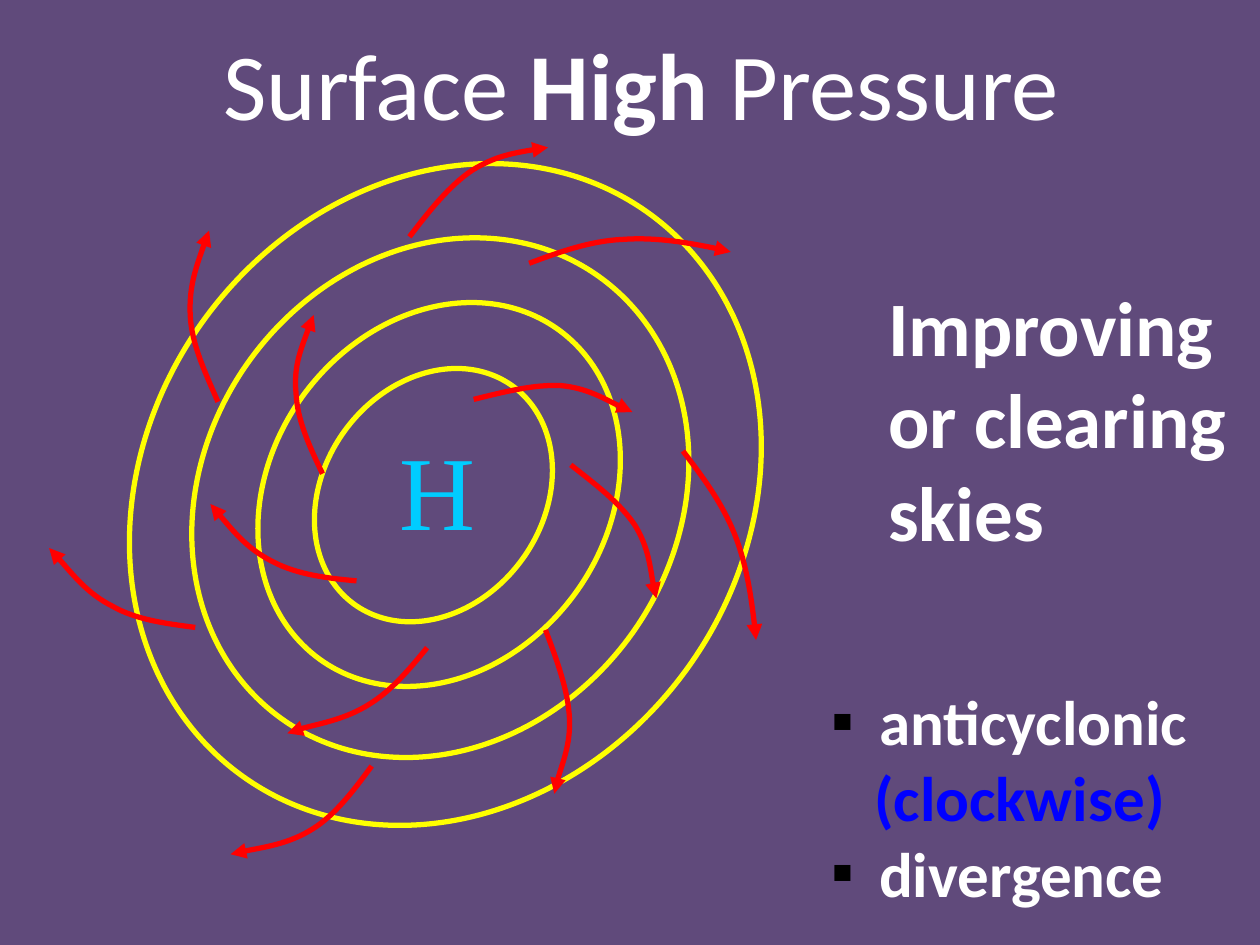
from lxml import etree
from pptx import Presentation
from pptx.dml.color import RGBColor
from pptx.enum.shapes import MSO_SHAPE
from pptx.enum.text import MSO_ANCHOR, PP_ALIGN
from pptx.oxml.ns import qn
from pptx.util import Inches, Pt

RECTANGLE = MSO_SHAPE.RECTANGLE
OVAL = MSO_SHAPE.OVAL
TOP = MSO_ANCHOR.TOP
LEFT = PP_ALIGN.LEFT
TITLE_ONLY = 5

COLORS = {
    "background": "604A7B",
    "isobar": "FFFF00",
    "wind": "FF0000",
    "center": "00CCFF",
    "text": "FFFFFF",
    "rotation": "0000FF",
    "bullet": "000000",
}

ISOBAR_ROTATION = 36.1
# left, top, width, height, from the outside in
ISOBARS = [
    (1.17, 1.17, 4.73, 5.51),
    (1.63, 1.79, 3.73, 4.32),
    (2.15, 2.31, 2.67, 3.23),
    (2.57, 2.86, 1.74, 2.14),
]

# Start point, then three points for each of two Bezier segments
WIND_ARROWS = [
    [(1.73, 3.19), (1.63, 2.96), (1.52, 2.73), (1.51, 2.5), (1.5, 2.27), (1.58, 2.05), (1.66, 1.83)],
    [(2.56, 3.76), (2.46, 3.55), (2.36, 3.34), (2.35, 3.12), (2.33, 2.91), (2.41, 2.71), (2.49, 2.5)],
    [(3.25, 1.88), (3.41, 1.67), (3.57, 1.47), (3.75, 1.35), (3.93, 1.24), (4.14, 1.2), (4.35, 1.17)],
    [(4.2, 2.09), (4.44, 2), (4.69, 1.91), (4.95, 1.9), (5.22, 1.88), (5.66, 1.96), (5.8, 2)],
    [(4.33, 5), (4.42, 5.24), (4.51, 5.48), (4.52, 5.7), (4.53, 5.91), (4.41, 6.2), (4.4, 6.3)],
    [(3.39, 5.14), (3.25, 5.31), (3.11, 5.48), (2.93, 5.59), (2.74, 5.71), (2.36, 5.78), (2.28, 5.82)],
    [(2.83, 4.61), (2.6, 4.59), (2.36, 4.56), (2.17, 4.46), (1.97, 4.36), (1.82, 4.18), (1.67, 4)],
    [(1.55, 4.98), (1.32, 4.95), (1.08, 4.92), (0.89, 4.81), (0.69, 4.71), (0.47, 4.43), (0.39, 4.35)],
    [(2.95, 6.08), (2.81, 6.27), (2.66, 6.47), (2.48, 6.58), (2.29, 6.7), (1.95, 6.75), (1.83, 6.78)],
    [(3.76, 3.17), (4, 3.11), (4.24, 3.05), (4.45, 3.06), (4.66, 3.08), (4.92, 3.23), (5.02, 3.27)],
    [(4.53, 3.69), (4.72, 3.84), (4.92, 3.99), (5.04, 4.17), (5.15, 4.35), (5.18, 4.65), (5.21, 4.75)],
    [(5.42, 3.58), (5.58, 3.79), (5.73, 3.99), (5.83, 4.24), (5.93, 4.49), (5.99, 4.93), (6, 5.08)],
]


def color(name):
    return RGBColor.from_string(COLORS[name])


def style_outline(shape, line_color, width=3):
    shape.shadow.inherit = False
    shape.fill.background()
    shape.line.color.rgb = color(line_color)
    shape.line.width = Pt(width)


def add_background(slide, presentation):
    shape = slide.shapes.add_shape(
        RECTANGLE, 0, 0, presentation.slide_width, presentation.slide_height)
    style_outline(shape, "background", 0.75)
    shape.fill.solid()
    shape.fill.fore_color.rgb = color("background")


def add_isobar(slide, box):
    shape = slide.shapes.add_shape(OVAL, *map(Inches, box))
    shape.rotation = ISOBAR_ROTATION
    style_outline(shape, "isobar")


def add_wind_arrow(slide, points):
    start, *rest = [(Inches(x), Inches(y)) for x, y in points]
    builder = slide.shapes.build_freeform(*start)
    builder.add_line_segments(rest, close=False)
    shape = builder.convert_to_shape()
    style_outline(shape, "wind")

    # Turn each group of three line points into one Bezier segment
    outline = shape.element.find(".//" + qn("a:path"))
    lines = outline.findall(qn("a:lnTo"))
    for first in range(0, len(lines), 3):
        curve = etree.SubElement(outline, qn("a:cubicBezTo"))
        for line in lines[first:first + 3]:
            curve.append(line[0])
            outline.remove(line)

    tail = etree.SubElement(shape.line._get_or_add_ln(), qn("a:tailEnd"))
    tail.set("type", "triangle")


def add_run(paragraph, text, size, font="Calibri", fill="text", bold=False):
    run = paragraph.add_run()
    run.text = text
    run.font.size = Pt(size)
    run.font.name = font
    run.font.bold = bold
    run.font.color.rgb = color(fill)


def add_text(slide, box, lines, **text_format):
    frame = slide.shapes.add_textbox(*map(Inches, box)).text_frame
    frame.word_wrap = True
    paragraphs = [frame.paragraphs[0]] + [frame.add_paragraph() for _ in lines[1:]]
    for paragraph, line in zip(paragraphs, lines):
        add_run(paragraph, line, **text_format)
    return paragraphs


def add_bullet(paragraph, indent):
    properties = paragraph._p.get_or_add_pPr()
    properties.set("marL", str(Inches(indent)))
    properties.set("indent", str(-Inches(indent)))
    bullet_color = etree.SubElement(properties, qn("a:buClr"))
    etree.SubElement(bullet_color, qn("a:srgbClr")).set("val", COLORS["bullet"])
    etree.SubElement(properties, qn("a:buFont")).set("typeface", "Calibri")
    etree.SubElement(properties, qn("a:buChar")).set("char", "▪")


def add_title(slide):
    title = slide.shapes.title
    title.left, title.top, title.width, title.height = map(Inches, (1.67, 0.16, 7.25, 1.01))
    title.text_frame.vertical_anchor = TOP
    paragraph = title.text_frame.paragraphs[0]
    paragraph.alignment = LEFT
    for text, bold in [("Surface ", False), ("High", True), (" Pressure", False)]:
        add_run(paragraph, text, 54, bold=bold)
    # Bring the title in front of the background rectangle
    slide.shapes._spTree.append(title.element)


def main():
    presentation = Presentation()
    presentation.slide_width = Inches(10)
    presentation.slide_height = Inches(7.5)
    slide = presentation.slides.add_slide(presentation.slide_layouts[TITLE_ONLY])
    add_background(slide, presentation)

    # Pressure system
    for box in ISOBARS:
        add_isobar(slide, box)
    for points in WIND_ARROWS:
        add_wind_arrow(slide, points)
    add_text(slide, (3.07, 3.33, 0.8, 1.1), ["H"],
             size=60, font="Times New Roman", fill="center")

    # Weather and circulation
    add_text(slide, (6.95, 2.17, 3.05, 2.32), ["Improving", "or clearing", "skies"],
             size=44, bold=True)
    cyclone, rotation, divergence = add_text(
        slide, (6.5, 5.37, 3.14, 1.92), ["anticyclonic", "(clockwise)", "divergence"],
        size=36, bold=True)
    for paragraph in (cyclone, divergence):
        add_bullet(paragraph, 0.38)
    rotation._p.get_or_add_pPr().set("marL", str(Inches(0.34)))
    rotation.runs[0].font.color.rgb = color("rotation")

    add_title(slide)
    presentation.save("out.pptx")


if __name__ == "__main__":
    main()
